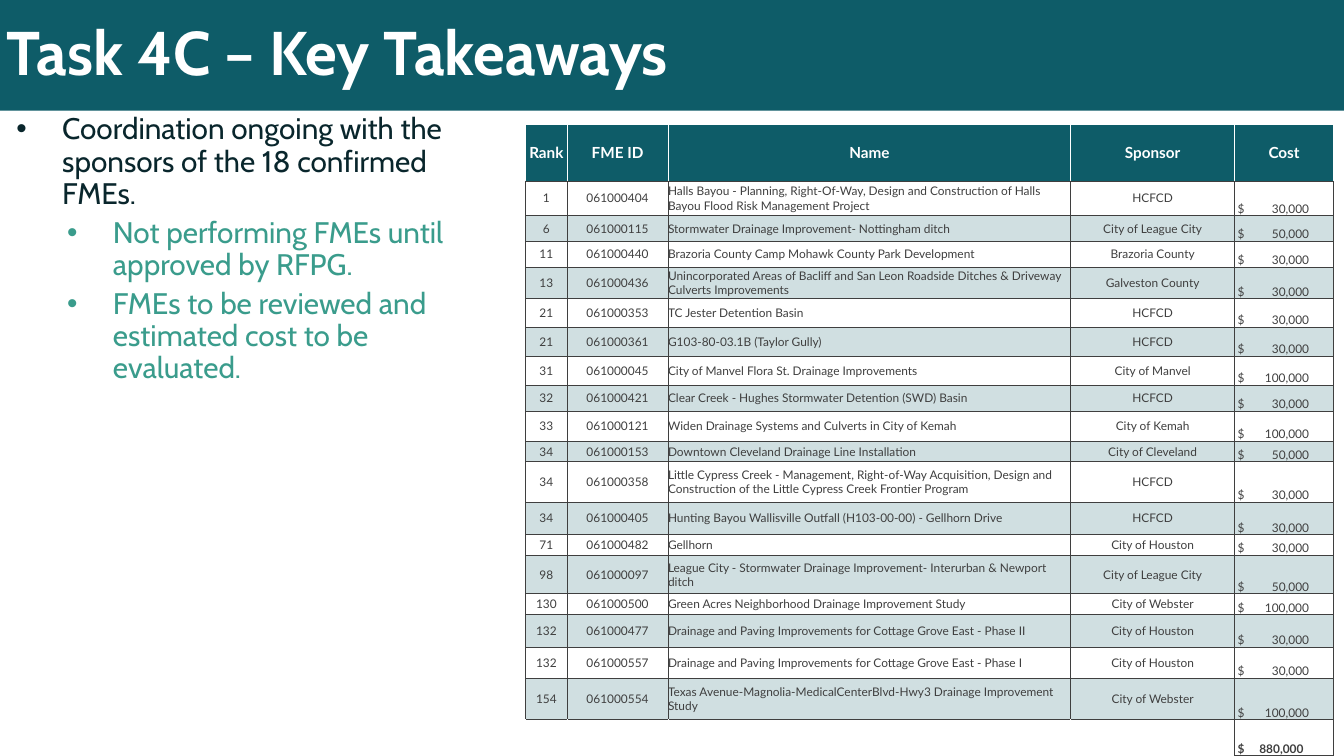
from pptx import Presentation
from pptx.dml.color import RGBColor
from pptx.enum.shapes import MSO_SHAPE
from pptx.enum.text import MSO_ANCHOR as ANCHOR, PP_ALIGN as ALIGN
from pptx.oxml.ns import qn
from pptx.util import Inches, Pt
from lxml.etree import SubElement

TEAL = RGBColor(0x0E, 0x5C, 0x68)
GREEN = RGBColor(0x3A, 0x9C, 0x8C)
INK = RGBColor(0x09, 0x26, 0x2C)
GRAY = RGBColor(0x3F, 0x3F, 0x3F)
BAND = RGBColor(0xD0, 0xDF, 0xE1)
WHITE = RGBColor(0xFF, 0xFF, 0xFF)

BULLETS = [
    (0, "Coordination ongoing with the sponsors of the 18 confirmed FMEs."),
    (1, "Not performing FMEs until approved by RFPG."),
    (1, "FMEs to be reviewed and estimated cost to be evaluated."),
]
HEADERS = ["Rank", "FME ID", "Name", "Sponsor", "Cost"]
PROJECTS = [
    ("1", "061000404", "Halls Bayou - Planning, Right-Of-Way, Design and Construction of Halls "
     "Bayou Flood Risk Management Project", "HCFCD", 30000),
    ("6", "061000115", "Stormwater Drainage Improvement- Nottingham ditch", "City of League City", 50000),
    ("11", "061000440", "Brazoria County Camp Mohawk County Park Development", "Brazoria County", 30000),
    ("13", "061000436", "Unincorporated Areas of Bacliff and San Leon Roadside Ditches & Driveway "
     "Culverts Improvements", "Galveston County", 30000),
    ("21", "061000353", "TC Jester Detention Basin", "HCFCD", 30000),
    ("21", "061000361", "G103-80-03.1B (Taylor Gully)", "HCFCD", 30000),
    ("31", "061000045", "City of Manvel Flora St. Drainage Improvements", "City of Manvel", 100000),
    ("32", "061000421", "Clear Creek - Hughes Stormwater Detention (SWD) Basin", "HCFCD", 30000),
    ("33", "061000121", "Widen Drainage Systems and Culverts in City of Kemah", "City of Kemah", 100000),
    ("34", "061000153", "Downtown Cleveland Drainage Line Installation", "City of Cleveland", 50000),
    ("34", "061000358", "Little Cypress Creek - Management, Right-of-Way Acquisition, Design and "
     "Construction of the Little Cypress Creek Frontier Program", "HCFCD", 30000),
    ("34", "061000405", "Hunting Bayou Wallisville Outfall (H103-00-00) - Gellhorn Drive", "HCFCD", 30000),
    ("71", "061000482", "Gellhorn", "City of Houston", 30000),
    ("98", "061000097", "League City - Stormwater Drainage Improvement- Interurban & Newport ditch",
     "City of League City", 50000),
    ("130", "061000500", "Green Acres Neighborhood Drainage Improvement Study", "City of Webster", 100000),
    ("132", "061000477", "Drainage and Paving Improvements for Cottage Grove East - Phase II",
     "City of Houston", 30000),
    ("132", "061000557", "Drainage and Paving Improvements for Cottage Grove East - Phase I",
     "City of Houston", 30000),
    ("154", "061000554", "Texas Avenue-Magnolia-MedicalCenterBlvd-Hwy3 Drainage Improvement Study",
     "City of Webster", 100000),
]
COL_WIDTHS = [0.68, 1.65, 6.59, 2.68, 1.62]
ROW_HEIGHTS = [0.93, 0.57, 0.42, 0.42, 0.52, 0.47, 0.47, 0.48, 0.42, 0.49,
               0.34, 0.66, 0.53, 0.34, 0.63, 0.34, 0.53, 0.51, 0.68, 0.59]


def write(p, text, font="Lato", size=14, color=GRAY, bold=False, align=ALIGN.LEFT,
          spacing=None, before=None, indent=None, tab=None):
    p.alignment = align
    if spacing:
        p.line_spacing = spacing
    if before:
        p.space_before = Pt(before)
    pPr = p._p.get_or_add_pPr()
    if indent:
        pPr.set("marL", str(Inches(indent)))
        pPr.set("indent", str(Inches(-0.75)))
        SubElement(pPr, qn("a:buFont"), typeface="Arial")
        SubElement(pPr, qn("a:buChar"), char="•")
    if tab:
        tabs = SubElement(pPr, qn("a:tabLst"))
        SubElement(tabs, qn("a:tab"), pos=str(Inches(tab)), algn="r")
    r = p.add_run()
    r.text = text
    r.font.name, r.font.size, r.font.bold = font, Pt(size), bold
    r.font.color.rgb = color


class Deck:
    """Holds the heading font and the current slide, and adds elements to it."""

    def __init__(self, prs, font="Cabin"):
        self.font = font
        self.s = prs.slides.add_slide(prs.slide_layouts[6])

    def title(self, text, x, y, w, h):
        sp = self.s.shapes.add_shape(MSO_SHAPE.RECTANGLE, Inches(x), Inches(y), Inches(w), Inches(h))
        sp.shadow.inherit = False
        sp.fill.solid()
        sp.fill.fore_color.rgb = TEAL
        sp.line.fill.background()
        tf = sp.text_frame
        tf.word_wrap, tf.vertical_anchor = True, ANCHOR.MIDDLE
        write(tf.paragraphs[0], text, font=self.font, size=72.6, color=WHITE, bold=True, spacing=0.9)

    def bullets(self, items, x, y, w, h):
        tf = self.s.shapes.add_textbox(Inches(x), Inches(y), Inches(w), Inches(h)).text_frame
        tf.word_wrap = True
        for i, (level, text) in enumerate(items):
            p = tf.add_paragraph() if i else tf.paragraphs[0]
            p.level = level
            write(p, text, font=self.font, size=35, color=GREEN if level else INK, spacing=0.9,
                  before=8.2 if i else None, indent=1.58 if level else 0.75)

    def cell(self, cell, text, fill, borders, anchor=ANCHOR.MIDDLE, left=0, **style):
        tcPr = cell._tc.get_or_add_tcPr()
        for side, color in zip("LRTB", borders):
            ln = SubElement(tcPr, qn(f"a:ln{side}"), w=str(Pt(1)))
            SubElement(SubElement(ln, qn("a:solidFill")), qn("a:srgbClr"), val=str(color))
        if fill is None:
            cell.fill.background()
        else:
            cell.fill.solid()
            cell.fill.fore_color.rgb = fill
        cell.vertical_anchor = anchor
        cell.margin_left = Inches(left)
        cell.margin_right = cell.margin_top = cell.margin_bottom = 0
        if text:
            write(cell.text_frame.paragraphs[0], text, **style)

    def cost(self, cell, amount, fill, tab=1.17, bold=False):
        self.cell(cell, f"$\t{amount:,}", fill, [GRAY] * 4, anchor=ANCHOR.BOTTOM, left=0.05,
                  tab=tab, bold=bold)

    def table(self, headers, projects, x, y):
        tbl = self.s.shapes.add_table(len(ROW_HEIGHTS), len(COL_WIDTHS), Inches(x), Inches(y),
                                      Inches(sum(COL_WIDTHS)), Inches(sum(ROW_HEIGHTS))).table
        tbl.first_row = tbl.horz_banding = False
        for col, width in zip(tbl.columns, COL_WIDTHS):
            col.width = Inches(width)
        for row, height in zip(tbl.rows, ROW_HEIGHTS):
            row.height = Inches(height)
        for c, text in enumerate(headers):
            self.cell(tbl.cell(0, c), text, TEAL, [WHITE, WHITE, WHITE, GRAY],
                      size=18, color=WHITE, bold=True, align=ALIGN.CENTER)
        for i, (*texts, amount) in enumerate(projects, 1):
            fill = WHITE if i % 2 else BAND
            for c, text in enumerate(texts):
                align = ALIGN.LEFT if headers[c] == "Name" else ALIGN.CENTER
                self.cell(tbl.cell(i, c), text, fill, [GRAY] * 4, align=align)
            self.cost(tbl.cell(i, len(texts)), amount, fill)
        last, end = len(projects) + 1, len(headers) - 1
        for c in range(end):
            right = GRAY if c == end - 1 else WHITE
            self.cell(tbl.cell(last, c), "", None, [WHITE, right, GRAY, WHITE])
        self.cost(tbl.cell(last, end), sum(p[-1] for p in projects), WHITE, tab=1.08, bold=True)


def main():
    prs = Presentation()
    prs.slide_width, prs.slide_height = Inches(21.99), Inches(12.37)
    deck = Deck(prs)
    deck.title("Task 4C – Key Takeaways", 0, 0, 21.99, 1.81)
    deck.bullets(BULLETS, 0.17, 1.82, 7.83, 9.45)
    deck.table(HEADERS, PROJECTS, 8.6, 2.03)
    prs.save("out.pptx")


if __name__ == "__main__":
    main()
